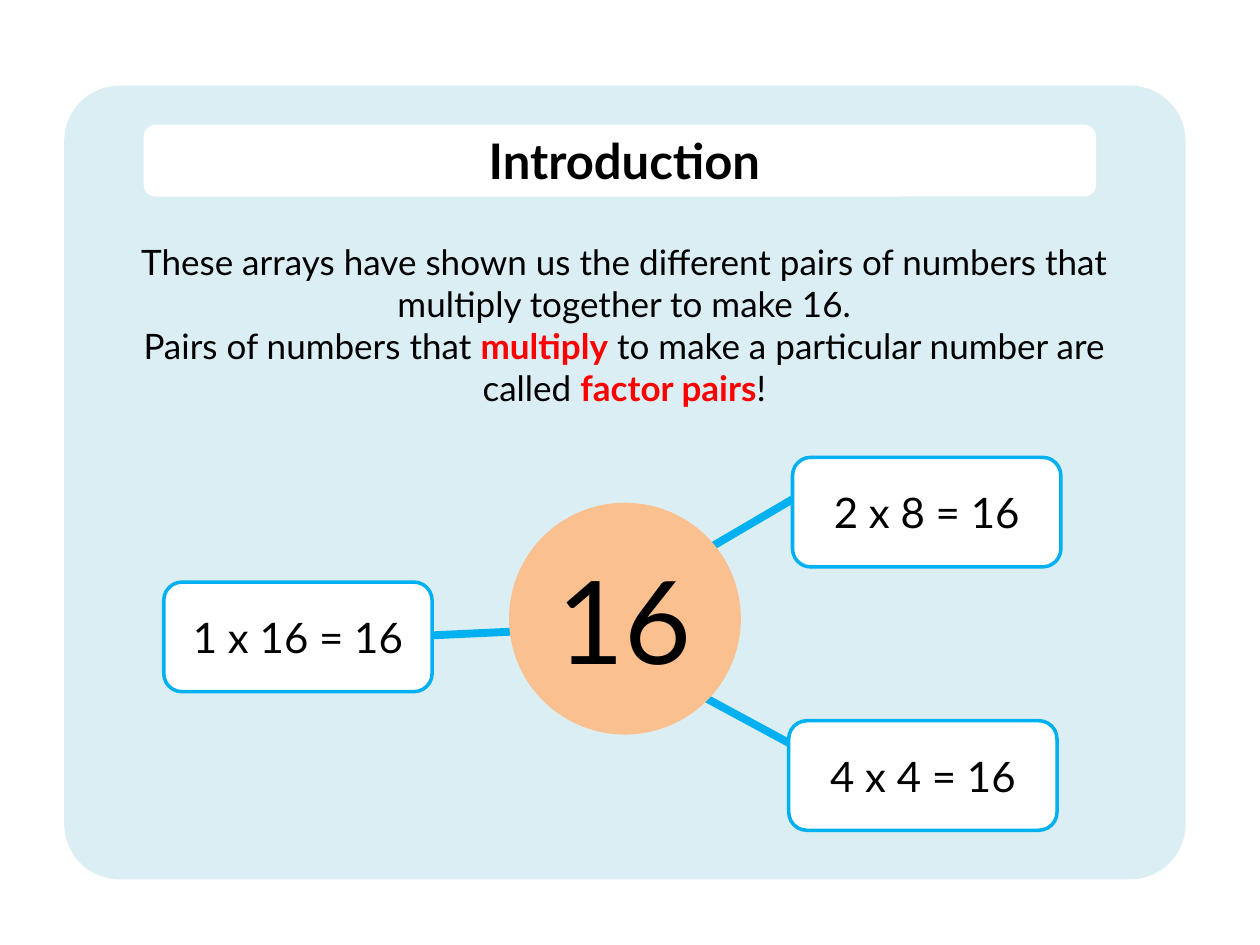
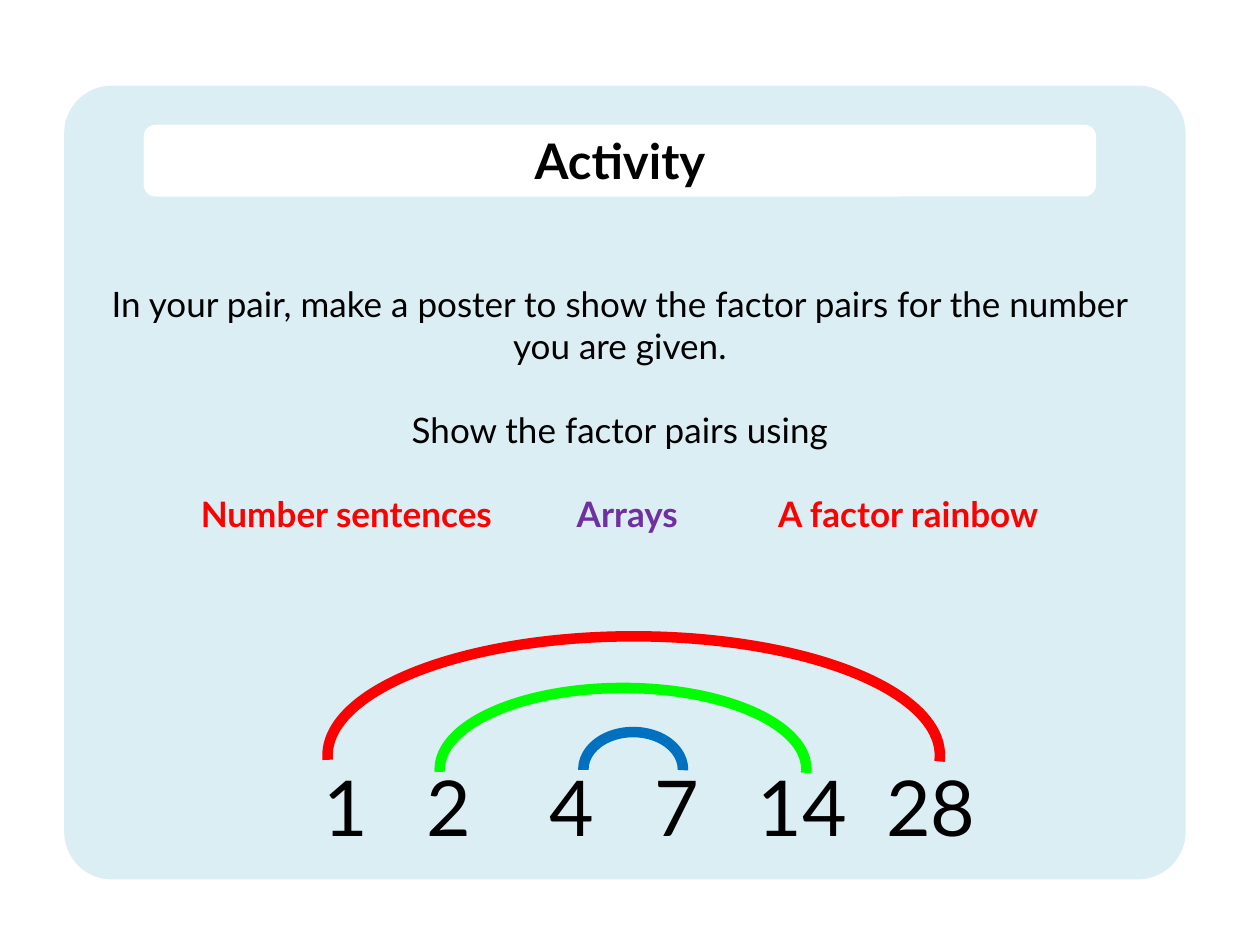
"""Build two lesson slides about factor pairs on a grid of 100 columns by 75 rows."""
from dataclasses import dataclass
from typing import NamedTuple

import pptx
import pptx.dml.color
import pptx.enum.shapes
import pptx.enum.text
import pptx.oxml.ns
import pptx.util
from lxml import etree

WIDTH, HEIGHT = pptx.util.Inches(10), pptx.util.Inches(7.5)
COLUMN, ROW = WIDTH / 100, HEIGHT / 75
FONT = "Lato"
BLACK, WHITE, RED, PURPLE = "000000", "FFFFFF", "FF0000", "7030A0"
PANEL, PEACH, SKY = "DBEEF4", "FAC090", "00B0F0"
SHAPES = pptx.enum.shapes.MSO_SHAPE
CENTER = pptx.enum.text.PP_ALIGN.CENTER
LEFT = pptx.enum.text.PP_ALIGN.LEFT


class Area(NamedTuple):
    """A rectangle in columns and rows."""
    left: float
    top: float
    width: float
    height: float


class Span(NamedTuple):
    """A stretch of text in one style."""
    text: str
    color: str = BLACK
    bold: bool = False


@dataclass
class Para:
    """A paragraph, centred unless it has centred tab stops in columns."""
    spans: list[Span]
    size: float = 20
    before: float = 0
    stops: tuple[float, ...] = ()


@dataclass
class Bubble:
    """A filled shape with one number or number sentence."""
    text: str
    area: Area
    kind: int = SHAPES.ROUNDED_RECTANGLE
    fill: str = WHITE
    size: float = 24
    line: str = SKY
    weight: float = 2


class Spoke(NamedTuple):
    """A straight line between two grid points."""
    x1: float
    y1: float
    x2: float
    y2: float


class Arch(NamedTuple):
    """One half-ellipse of the factor rainbow."""
    area: Area
    color: str


BUBBLES = [
    Bubble("2 x 8 = 16", Area(62.9, 36.3, 21.3, 8.7)),
    Bubble("1 x 16 = 16", Area(13, 46.2, 21.3, 8.7)),
    Bubble("4 x 4 = 16", Area(62.6, 57.2, 21.3, 8.7)),
    Bubble("16", Area(40.4, 39.9, 18.4, 18.4), SHAPES.OVAL, PEACH, 66, "", 0),
]
SPOKES = [
    Spoke(32.7, 50.5, 41.3, 50.1),
    Spoke(55.1, 44.2, 63.8, 39.1),
    Spoke(54.9, 54.8, 63.6, 59.5),
]
ARCHES = [
    Arch(Area(26, 50.5, 48.6, 18.9), "FF0000"),
    Arch(Area(34.9, 54.6, 29.1, 12.9), "00FF00"),
    Arch(Area(46.3, 58.1, 7.9, 5.9), "0070C0"),
]


def rgb(color: str) -> pptx.dml.color.RGBColor:
    """Turn a hex string into a colour."""
    return pptx.dml.color.RGBColor.from_string(color)


def place(area: Area) -> tuple[int, ...]:
    """Turn a grid area into slide lengths."""
    return (round(area.left * COLUMN), round(area.top * ROW),
            round(area.width * COLUMN), round(area.height * ROW))


def add_tab_stops(paragraph, stops: tuple[float, ...]) -> None:
    """Give a paragraph centred tab stops."""
    tabs = etree.SubElement(paragraph._p.get_or_add_pPr(), pptx.oxml.ns.qn("a:tabLst"))
    for stop in stops:
        etree.SubElement(tabs, pptx.oxml.ns.qn("a:tab"),
                         pos=str(round(stop * COLUMN)), algn="ctr")


def write(frame, paras: list[Para]) -> None:
    """Fill a text frame with styled paragraphs."""
    frame.word_wrap = True
    for index, para in enumerate(paras):
        paragraph = frame.add_paragraph() if index else frame.paragraphs[0]
        paragraph.alignment = LEFT if para.stops else CENTER
        if para.before:
            paragraph.space_before = pptx.util.Pt(para.before)
        if para.stops:
            add_tab_stops(paragraph, para.stops)
        for span in para.spans:
            run = paragraph.add_run()
            run.text = span.text
            run.font.name = FONT
            run.font.size = pptx.util.Pt(para.size)
            run.font.bold = span.bold
            run.font.color.rgb = rgb(span.color)


def add_text(page, area: Area, paras: list[Para]) -> None:
    """Add a text box."""
    write(page.shapes.add_textbox(*place(area)).text_frame, paras)


def add_figure(page, kind: int, area: Area, fill: str = "", line: str = "", weight: float = 0):
    """Add a flat preset shape with an optional fill and outline."""
    shape = page.shapes.add_shape(kind, *place(area))
    shape.shadow.inherit = False
    if fill:
        shape.fill.solid()
        shape.fill.fore_color.rgb = rgb(fill)
    else:
        shape.fill.background()
    if line:
        shape.line.color.rgb = rgb(line)
        shape.line.width = pptx.util.Pt(weight)
    else:
        shape.line.fill.background()
    return shape


def add_bubble(page, bubble: Bubble) -> None:
    """Add a shape with centred text."""
    shape = add_figure(page, bubble.kind, bubble.area, bubble.fill, bubble.line, bubble.weight)
    shape.text_frame.vertical_anchor = pptx.enum.text.MSO_ANCHOR.MIDDLE
    write(shape.text_frame, [Para([Span(bubble.text)], bubble.size)])


def add_spoke(page, spoke: Spoke) -> None:
    """Add a thick line from the hub to a bubble."""
    ends = (spoke.x1 * COLUMN, spoke.y1 * ROW, spoke.x2 * COLUMN, spoke.y2 * ROW)
    line = page.shapes.add_connector(pptx.enum.shapes.MSO_CONNECTOR.STRAIGHT, *map(round, ends))
    line.line.color.rgb = rgb(SKY)
    line.line.width = pptx.util.Pt(4.5)
    etree.SubElement(line._element.spPr, pptx.oxml.ns.qn("a:effectLst"))


def add_arch(page, arch: Arch) -> None:
    """Add one band of the rainbow."""
    shape = add_figure(page, SHAPES.ARC, arch.area, line=arch.color, weight=6)
    shape.adjustments[0] = 107.5
    shape.adjustments[1] = 0.68


def add_page(deck, title: str, rounding: float, area: Area, body: list[Para]):
    """Add a slide with the shared panel, title band and text."""
    page = deck.slides.add_slide(deck.slide_layouts[6])
    panel = add_figure(page, SHAPES.ROUNDED_RECTANGLE, Area(5.1, 6.8, 89, 63), PANEL)
    panel.adjustments[0] = rounding
    add_figure(page, SHAPES.ROUNDED_RECTANGLE, Area(11.4, 9.9, 75.6, 5.7), WHITE)
    add_text(page, area, [Para([Span(title, bold=True)], 28), *body])
    return page


def add_introduction(deck) -> None:
    """Show the factor pairs of 16 around a hub."""
    page = add_page(deck, "Introduction", 0.07, Area(7.2, 9.9, 84.7, 23.2), [
        Para([Span("These arrays have shown us the different pairs of numbers "
                   "that multiply together to make 16.")], before=29),
        Para([Span("Pairs of numbers that "), Span("multiply", RED, True),
              Span(" to make a particular number are called "),
              Span("factor pairs", RED, True), Span("!")]),
    ])
    for spoke in SPOKES:
        add_spoke(page, spoke)
    for bubble in BUBBLES:
        add_bubble(page, bubble)


def add_activity(deck) -> None:
    """Set the poster task and show a factor rainbow for 28."""
    page = add_page(deck, "Activity", 0.06, Area(7.3, 9.9, 83.8, 36.7), [
        Para([Span("In your pair, make a poster to show the factor pairs "
                   "for the number you are given.")], before=53),
        Para([Span("Show the factor pairs using")], before=24),
        Para([Span("\tNumber sentences", RED, True), Span("\tArrays", PURPLE, True),
              Span("\tA factor rainbow", RED, True)],
             before=24, stops=tuple(19.2 + 22.3 * index for index in range(3))),
    ])
    factors = [factor for factor in range(1, 29) if 28 % factor == 0]
    add_text(page, Area(10.6, 59.8, 81.9, 8.4), [
        Para([Span("".join(f"\t{factor}" for factor in factors))], 44,
             stops=(15.9, 24, 33.8, 42.1, 52.1, 62.3)),
    ])
    for arch in ARCHES:
        add_arch(page, arch)


def main() -> None:
    """Build and save the deck."""
    deck = pptx.Presentation()
    deck.slide_width, deck.slide_height = WIDTH, HEIGHT
    add_introduction(deck)
    add_activity(deck)
    deck.save("out.pptx")


if __name__ == "__main__":
    main()
